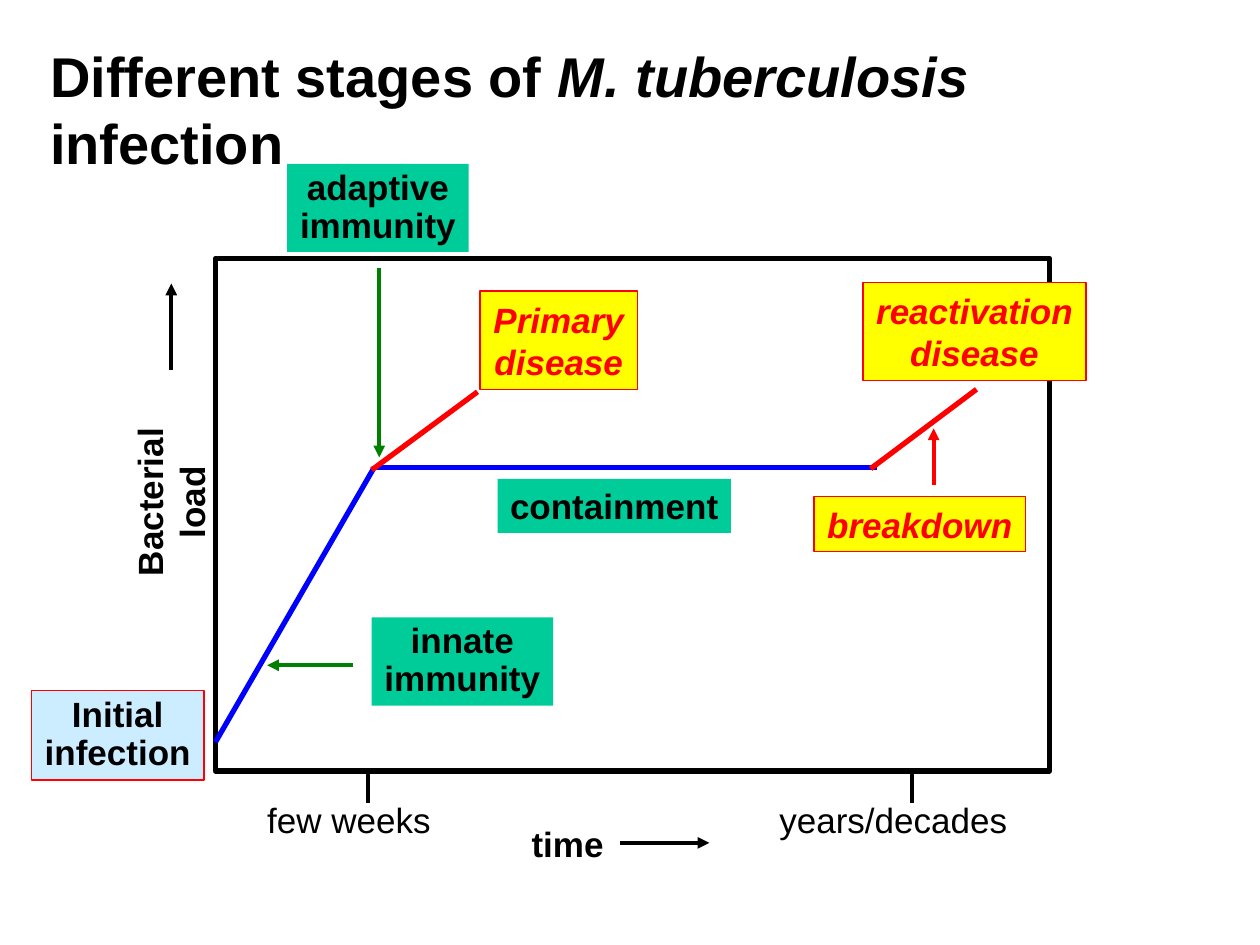
import pptx
import pptx.util
import pptx.dml.color
import pptx.enum.shapes
import pptx.enum.text
import pptx.oxml.ns
import lxml.etree

Inches = pptx.util.Inches
Align = pptx.enum.text.PP_ALIGN
Anchor = pptx.enum.text.MSO_ANCHOR

BLACK, RED, BLUE, DARK_GREEN = "000000", "FF0000", "0000FF", "008000"
MINT, YELLOW, PALE_BLUE = "00CC99", "FFFF00", "CCECFF"


def color(value):
    return pptx.dml.color.RGBColor.from_string(value)


def write(shape, text, size=20, ink=BLACK, bold=True, italic=False,
          align=Align.CENTER, spacing=None, wrap=False, anchor=Anchor.MIDDLE):
    frame = shape.text_frame
    frame.word_wrap = wrap
    frame.vertical_anchor = anchor
    for index, line in enumerate(text.split("\n")):
        para = frame.paragraphs[0] if index == 0 else frame.add_paragraph()
        para.alignment = align
        para.line_spacing = spacing
        for part, piece in enumerate(line.split("*")):
            span = para.add_run()
            span.text = piece
            span.font.name = "Arial"
            span.font.size = pptx.util.Pt(size)
            span.font.bold = bold
            span.font.italic = italic or part % 2 == 1
            span.font.color.rgb = color(ink)


def add_text(page, box, text, rotation=0, **style):
    shape = page.shapes.add_textbox(*map(Inches, box))
    shape.rotation = rotation
    write(shape, text, **style)


def add_box(page, box, fill=None, line=None, weight=0.75):
    shape = page.shapes.add_shape(
        pptx.enum.shapes.MSO_SHAPE.RECTANGLE, *map(Inches, box))
    shape.shadow.inherit = False
    if fill:
        shape.fill.solid()
        shape.fill.fore_color.rgb = color(fill)
    else:
        shape.fill.background()
    if line:
        shape.line.color.rgb = color(line)
        shape.line.width = pptx.util.Pt(weight)
    else:
        shape.line.fill.background()
    return shape


def add_line(page, start, end, ink, weight=2.25, arrow=False):
    line = page.shapes.add_connector(
        pptx.enum.shapes.MSO_CONNECTOR.STRAIGHT, *map(Inches, start + end))
    line.line.color.rgb = color(ink)
    line.line.width = pptx.util.Pt(weight)
    qn = pptx.oxml.ns.qn
    if arrow:
        lxml.etree.SubElement(line.line._get_or_add_ln(), qn("a:tailEnd"), type="triangle")
    lxml.etree.SubElement(line._element.spPr, qn("a:effectLst"))


def add_title(page, box):
    add_text(page, box, "Different stages of *M. tuberculosis* infection",
             size=32, align=Align.LEFT, wrap=True, anchor=Anchor.TOP)


def add_axes(page, box):
    left, top, width, height = box
    bottom = top + height
    add_box(page, box, line=BLACK, weight=3)
    for offset, label, label_width in ((1.21, "few weeks", 1.5),
                                       (5.53, "years/decades", 2.01)):
        tick = left + offset
        add_line(page, (tick, bottom), (tick, bottom + 0.25), BLACK, 2)
        center = tick - 0.15
        add_text(page, (center - label_width / 2, bottom + 0.17, label_width, 0.43),
                 label, bold=False)
    add_text(page, (left + 2.41, bottom + 0.36, 0.77, 0.43), "time")
    add_line(page, (left + 3.21, bottom + 0.57), (left + 3.92, bottom + 0.57),
             BLACK, arrow=True)
    add_text(page, (left - 1.37, top + 1.72, 2.02, 0.43), "Bacterial load", rotation=270)
    add_line(page, (left - 0.35, top + 0.89), (left - 0.35, top + 0.2), BLACK, arrow=True)


def add_curves(page, box):
    left, top = box[:2]
    curves = (
        ((0, 3.84), (1.26, 1.66), BLUE),
        ((1.26, 1.66), (5.25, 1.66), BLUE),
        ((1.24, 1.68), (2.08, 1.06), RED),
        ((5.2, 1.67), (6.04, 1.04), RED),
    )
    arrows = (
        ((1.3, 0.08), (1.3, 1.58), DARK_GREEN),
        ((1.09, 3.23), (0.41, 3.23), DARK_GREEN),
        ((5.7, 1.8), (5.7, 1.35), RED),
    )
    for group, weight, arrow in ((curves, 3, False), (arrows, 2.25, True)):
        for (x1, y1), (x2, y2), ink in group:
            add_line(page, (left + x1, top + y1), (left + x2, top + y2),
                     ink, weight, arrow)


def add_stages(page, box):
    left, top = box[:2]
    immunity = dict(fill=MINT), dict(spacing=0.9)
    disease = dict(fill=YELLOW, line=RED), dict(ink=RED, italic=True)
    infection = dict(fill=PALE_BLUE, line=RED), dict(spacing=0.9)
    containment = dict(fill=MINT), {}
    stages = (
        ("adaptive\nimmunity", 0.57, -0.75, 1.44, 0.7, immunity),
        ("innate\nimmunity", 1.24, 2.85, 1.44, 0.7, immunity),
        ("containment", 2.24, 1.75, 1.85, 0.43, containment),
        ("Initial\ninfection", -1.46, 3.43, 1.37, 0.71, infection),
        ("Primary\ndisease", 2.1, 0.26, 1.25, 0.78, disease),
        ("reactivation\ndisease", 5.14, 0.19, 1.77, 0.78, disease),
        ("breakdown", 4.75, 1.89, 1.68, 0.44, disease),
    )
    for text, x, y, width, height, (look, style) in stages:
        shape = add_box(page, (left + x, top + y, width, height), **look)
        write(shape, text, **style)


def main():
    deck = pptx.Presentation()
    deck.slide_width, deck.slide_height = Inches(10), Inches(7.5)
    page = deck.slides.add_slide(deck.slide_layouts[6])
    plot = (1.71, 2.05, 6.62, 4.07)
    add_title(page, (0.3, 0.28, 9.4, 0.63))
    add_axes(page, plot)
    add_curves(page, plot)
    add_stages(page, plot)
    deck.save("out.pptx")


if __name__ == "__main__":
    main()
